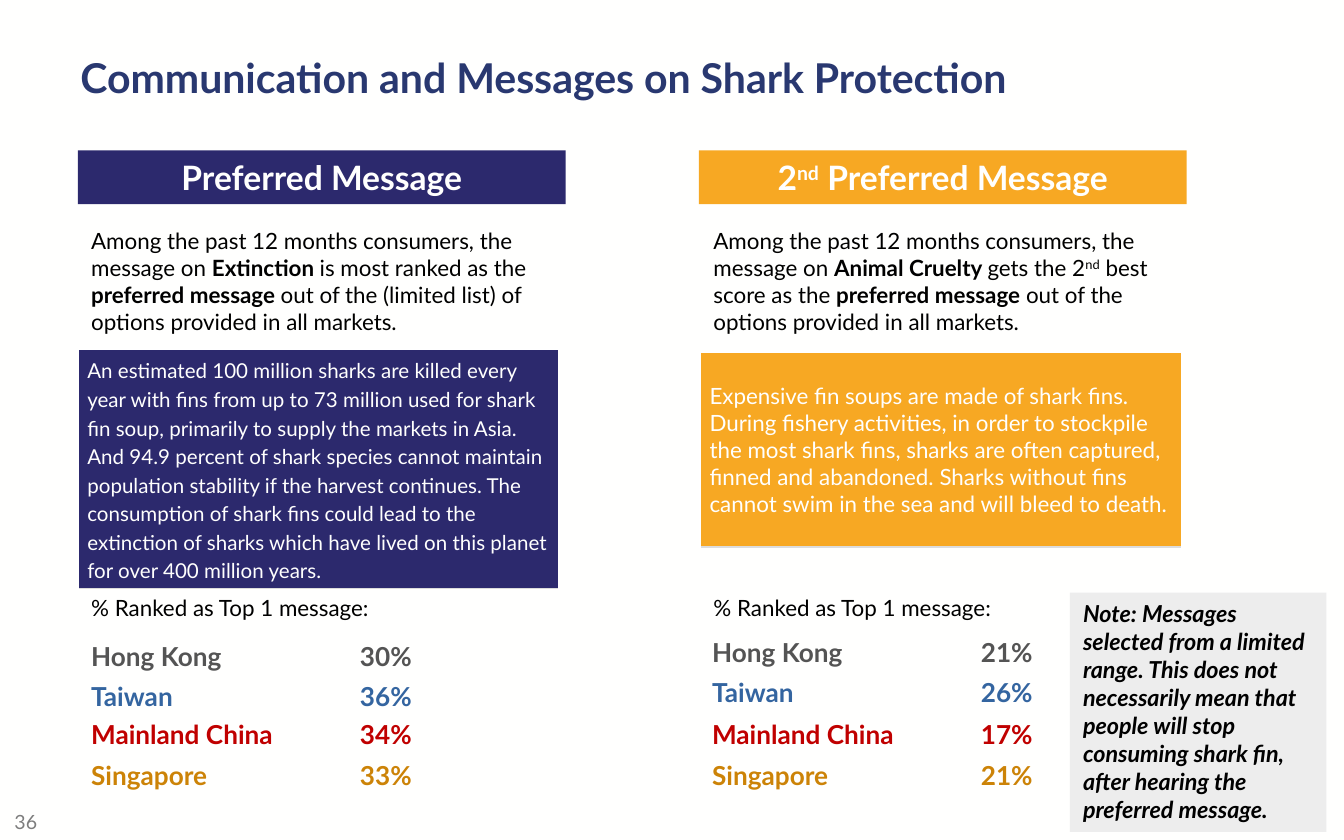
from lxml import etree
from pptx import Presentation
from pptx.dml.color import RGBColor
from pptx.enum.shapes import MSO_SHAPE
from pptx.enum.text import MSO_ANCHOR, PP_ALIGN
from pptx.oxml.ns import qn
from pptx.util import Emu, Pt

PX = 9144
RECTANGLE = MSO_SHAPE.RECTANGLE
TOP, MIDDLE = MSO_ANCHOR.TOP, MSO_ANCHOR.MIDDLE
LEFT, CENTER = PP_ALIGN.LEFT, PP_ALIGN.CENTER

FONT = "Lato"
WHITE, BLACK, NAVY, ORANGE = "FFFFFE", "000000", "2C296D", "F7A823"
BOLD = {"bold": True}
SUPERSCRIPT = {"baseline": 30000}
MARKETS = {"Hong Kong": "545454", "Taiwan": "3465A0",
           "Mainland China": "C00000", "Singapore": "CC8307"}
RANKED = "% Ranked as Top 1 message:"

COLUMNS = [
    {
        "x": 58, "header_x": 58, "color": NAVY,
        "header": [("Preferred Message", {})],
        "intro": [
            ("Among the past 12 months consumers, the message on ", {}),
            ("Extinction ", BOLD),
            ("is most ranked as the ", {}),
            ("preferred message ", BOLD),
            ("out of the (limited list) of options provided in all markets.", {}),
        ],
        "message": "An estimated 100 million sharks are killed every year with fins "
                   "from up to 73 million used for shark fin soup, primarily to supply "
                   "the markets in Asia. And 94.9 percent of shark species cannot "
                   "maintain population stability if the harvest continues. The "
                   "consumption of shark fins could lead to the extinction of sharks "
                   "which have lived on this planet for over 400 million years.",
        "message_y": 260, "message_height": 178,
        "message_size": 11, "message_spacing": 1.15,
        "shares": [30, 36, 34, 33], "share_tops": [469, 499, 527, 558],
    },
    {
        "x": 521, "header_x": 520, "color": ORANGE,
        "header": [("2", {}), ("nd", SUPERSCRIPT), (" Preferred Message", {})],
        "intro": [
            ("Among the past 12 months consumers, the message on ", {}),
            ("Animal Cruelty ", BOLD),
            ("gets the 2", {}),
            ("nd", SUPERSCRIPT),
            (" best score as the ", {}),
            ("preferred message", BOLD),
            (" out of the options provided in all markets.", {}),
        ],
        "message": "Expensive fin soups are made of shark fins. During fishery "
                   "activities, in order to stockpile the most shark fins, sharks are "
                   "often captured, finned and abandoned. Sharks without fins cannot "
                   "swim in the sea and will bleed to death.",
        "message_y": 262, "message_height": 145,
        "message_size": 12, "message_spacing": 1.0,
        "shares": [21, 26, 17, 21], "share_tops": [466, 496, 527, 558],
    },
]


def px(length):
    return Emu(length * PX)


def rgb(value):
    return RGBColor.from_string(value)


class SlideBuilder:
    def __init__(self, slide):
        self.slide = slide
        background = slide.background.fill
        background.solid()
        background.fore_color.rgb = rgb(WHITE)

    def add_runs(self, paragraph, runs, size, color, align=LEFT, **style):
        paragraph.alignment = align
        for text, extra in runs:
            run = paragraph.add_run()
            run.text = text
            values = {"name": FONT, "size": Pt(size), **style, **extra}
            baseline = values.pop("baseline", None)
            for attribute, value in values.items():
                setattr(run.font, attribute, value)
            run.font.color.rgb = rgb(color)
            if baseline:
                run._r.get_or_add_rPr().set("baseline", str(baseline))

    def text(self, x, y, width, height, words, size, color, anchor=MIDDLE, tab=None, **style):
        frame = self.slide.shapes.add_textbox(*map(px, (x, y, width, height))).text_frame
        frame.word_wrap = True
        frame.vertical_anchor = anchor
        paragraph = frame.paragraphs[0]
        if tab:
            stops = etree.SubElement(paragraph._p.get_or_add_pPr(), qn("a:tabLst"))
            etree.SubElement(stops, qn("a:tab"), pos=str(px(tab)), algn="l")
        self.add_runs(paragraph, [(words, {})], size, color, **style)

    def panel(self, x, y, width, height, fill, paragraphs, size, color,
              inset_top=5, gap=0, **style):
        panel = self.slide.shapes.add_shape(RECTANGLE, *map(px, (x, y, width, height)))
        panel.shadow.inherit = False
        panel.fill.solid()
        panel.fill.fore_color.rgb = rgb(fill)
        panel.line.fill.background()
        frame = panel.text_frame
        frame.word_wrap = True
        frame.vertical_anchor = TOP
        frame.margin_top = px(inset_top)
        for index, runs in enumerate(paragraphs):
            paragraph = frame.add_paragraph() if index else frame.paragraphs[0]
            if index:
                paragraph.space_before = Pt(gap)
            self.add_runs(paragraph, runs, size, color, **style)

    def message_table(self, x, y, width, height, fill, words, size, spacing):
        table = self.slide.shapes.add_table(1, 1, *map(px, (x, y, width, height))).table
        table.first_row = table.horz_banding = False
        cell = table.cell(0, 0)
        cell.fill.solid()
        cell.fill.fore_color.rgb = rgb(fill)
        cell.vertical_anchor = MIDDLE
        cell.margin_left = cell.margin_right = px(7)
        cell.margin_top = cell.margin_bottom = 0
        border = etree.Element(qn("a:lnB"), w=str(Pt(1)))
        border_fill = etree.SubElement(border, qn("a:solidFill"))
        etree.SubElement(border_fill, qn("a:srgbClr"), val="DCDCDC")
        cell._tc.get_or_add_tcPr().insert(0, border)
        paragraph = cell.text_frame.paragraphs[0]
        paragraph.line_spacing = spacing
        self.add_runs(paragraph, [(words, {})], size, WHITE)

    def message_column(self, column):
        x, header_x, color = column["x"], column["header_x"], column["color"]
        self.panel(x, 144, 358, 429, WHITE, [column["intro"], [(RANKED, {})]],
                   12, BLACK, inset_top=25, gap=139)
        self.message_table(x, column["message_y"], 358, column["message_height"], color,
                           column["message"], column["message_size"],
                           column["message_spacing"])
        rows = zip(MARKETS.items(), column["shares"], column["share_tops"])
        for (market, market_color), share, top in rows:
            self.text(header_x, top, 275, 38, f"{market}\t{share}%", 14, market_color,
                      tab=200, bold=True)
        self.panel(header_x, 112, 363, 40, color, [column["header"]], 18, WHITE,
                   align=CENTER, bold=True)


def main():
    deck = Presentation()
    deck.slide_width, deck.slide_height = px(1000), px(625)
    builder = SlideBuilder(deck.slides.add_slide(deck.slide_layouts[6]))
    builder.text(1, 598, 47, 28, "36", 10.5, "7D7D7D", anchor=TOP)
    builder.text(50, 5, 919, 104, "Communication and Messages on Shark Protection",
                 22, "293870", bold=True)
    for column in COLUMNS:
        builder.message_column(column)
    note = ("Note: Messages selected from a limited range. This does not necessarily mean "
            "that people will stop consuming shark fin, after hearing the preferred message.")
    builder.panel(796, 441, 191, 178, "EDEDED", [[(note, {})]], 12.5, BLACK,
                  bold=True, italic=True)
    deck.save("out.pptx")


if __name__ == "__main__":
    main()
